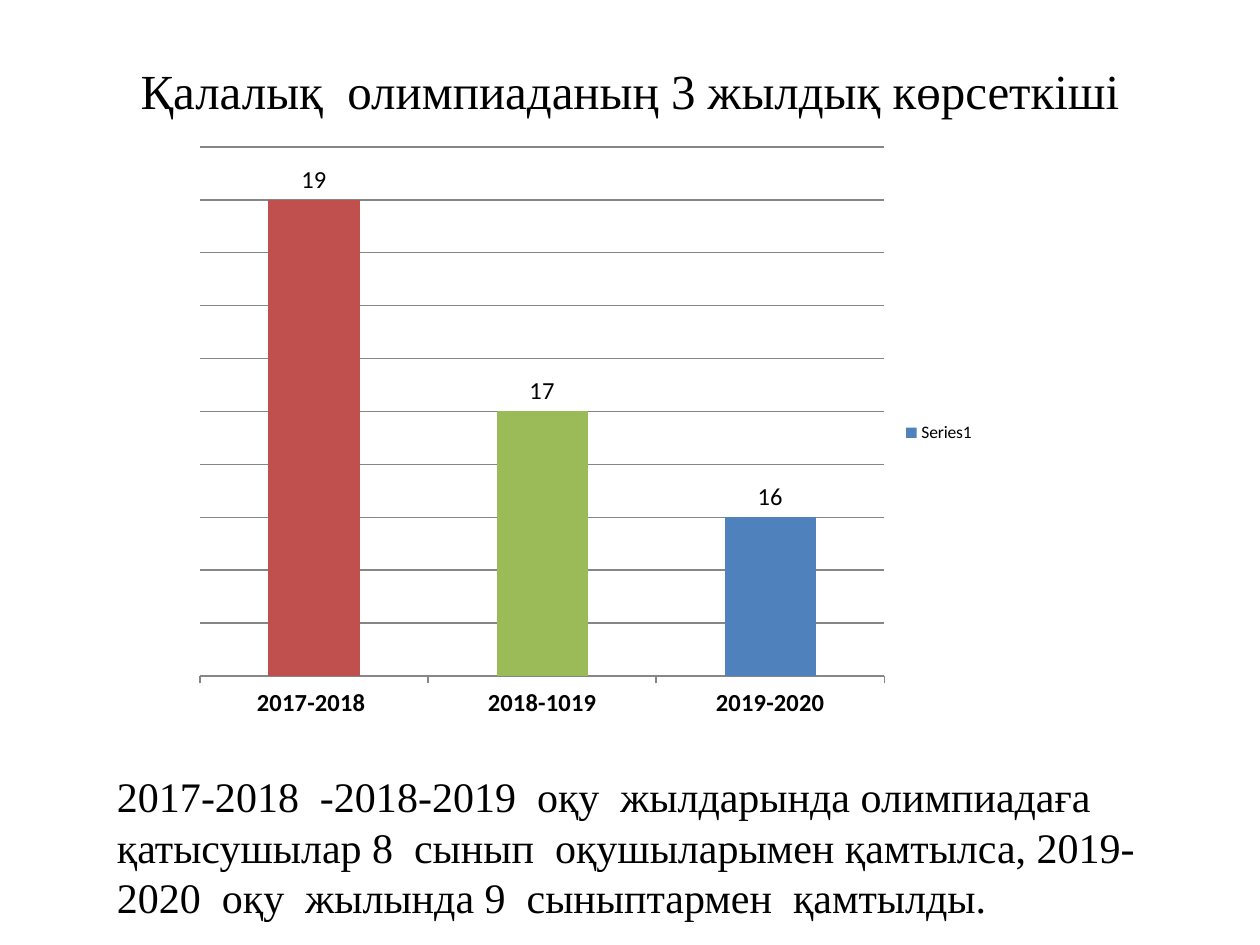
from pptx import Presentation
from pptx.chart.data import CategoryChartData
from pptx.dml.color import RGBColor
from pptx.enum.chart import XL_CHART_TYPE as ChartType, XL_LABEL_POSITION as LabelPos
from pptx.enum.chart import XL_LEGEND_POSITION as LegendPos, XL_TICK_LABEL_POSITION as TickLabelPos
from pptx.enum.chart import XL_TICK_MARK as TickMark
from pptx.enum.text import MSO_ANCHOR as Anchor, PP_ALIGN as Align
from pptx.util import Inches, Pt

BLACK = RGBColor(0x00, 0x00, 0x00)
GRAY = RGBColor(0x86, 0x86, 0x86)
RED = RGBColor(0xC0, 0x50, 0x4D)
GREEN = RGBColor(0x9B, 0xBB, 0x59)
BLUE = RGBColor(0x4F, 0x81, 0xBD)


def apply(target, **values):
    for key, value in values.items():
        setattr(target, key, value)


class SlideBuilder:
    text_font = "Times New Roman"
    chart_font = "Calibri"

    def __init__(self, deck):
        self.width, self.height = deck.slide_width, deck.slide_height
        self.slide = deck.slides.add_slide(deck.slide_layouts[6])

    def area(self, left, top, width, height):
        return (int(left * self.width), int(top * self.height),
                int(width * self.width), int(height * self.height))

    def text(self, share, words, size, align=Align.LEFT, **frame_format):
        frame = self.slide.shapes.add_textbox(*self.area(*share)).text_frame
        apply(frame, word_wrap=True, vertical_anchor=Anchor.MIDDLE, **frame_format)
        paragraph = frame.paragraphs[0]
        paragraph.alignment = align
        run = paragraph.add_run()
        run.text = words
        apply(run.font, name=self.text_font, size=Pt(size))
        run.font.color.rgb = BLACK

    def columns(self, share, series_name, results, colors):
        data = CategoryChartData()
        data.categories = list(results)
        data.add_series(series_name, list(results.values()))
        chart = self.slide.shapes.add_chart(
            ChartType.COLUMN_CLUSTERED, *self.area(*share), data).chart
        apply(chart, has_title=False, has_legend=True)
        apply(chart.font, name=self.chart_font, size=Pt(10))
        chart.font.color.rgb = BLACK
        apply(chart.legend, position=LegendPos.RIGHT, include_in_layout=False)

        years, scores = chart.category_axis, chart.value_axis
        apply(years, major_tick_mark=TickMark.OUTSIDE)
        apply(years.tick_labels.font, size=Pt(14), bold=True)
        apply(scores, minimum_scale=14.5, maximum_scale=19.5, major_unit=0.5,
              has_major_gridlines=True, visible=False,
              tick_label_position=TickLabelPos.NONE)
        for line in (years.format.line, scores.major_gridlines.format.line):
            line.color.rgb = GRAY
            line.width = Pt(0.75)

        plot = chart.plots[0]
        apply(plot, gap_width=150, vary_by_categories=False, has_data_labels=True)
        apply(plot.data_labels, show_value=True, position=LabelPos.OUTSIDE_END)
        apply(plot.data_labels.font, size=Pt(14))
        bars = plot.series[0]
        self.fill(bars, BLUE)
        for index, color in enumerate(colors):
            self.fill(bars.points[index], color)

    def fill(self, part, color):
        part.format.fill.solid()
        part.format.fill.fore_color.rgb = color


def main():
    deck = Presentation()
    apply(deck, slide_width=Inches(10), slide_height=Inches(7.5))
    builder = SlideBuilder(deck)
    builder.text((0.05, 0.04, 0.9, 0.167), "Қалалық  олимпиаданың 3 жылдық көрсеткіші",
                 28, Align.CENTER, margin_bottom=Inches(0.48))
    builder.columns((0.146, 0.143, 0.638, 0.63), "Series1",
                    {"2017-2018 ": 19, "2018-1019": 17, "2019-2020": 16},
                    (RED, GREEN, BLUE))
    builder.text((0.083, 0.808, 0.882, 0.175),
                 "2017-2018  -2018-2019  оқу  жылдарында олимпиадаға  қатысушылар 8  сынып  "
                 "оқушыларымен қамтылса, 2019-2020  оқу  жылында 9  сыныптармен  қамтылды.", 24)
    deck.save("out.pptx")


if __name__ == "__main__":
    main()
